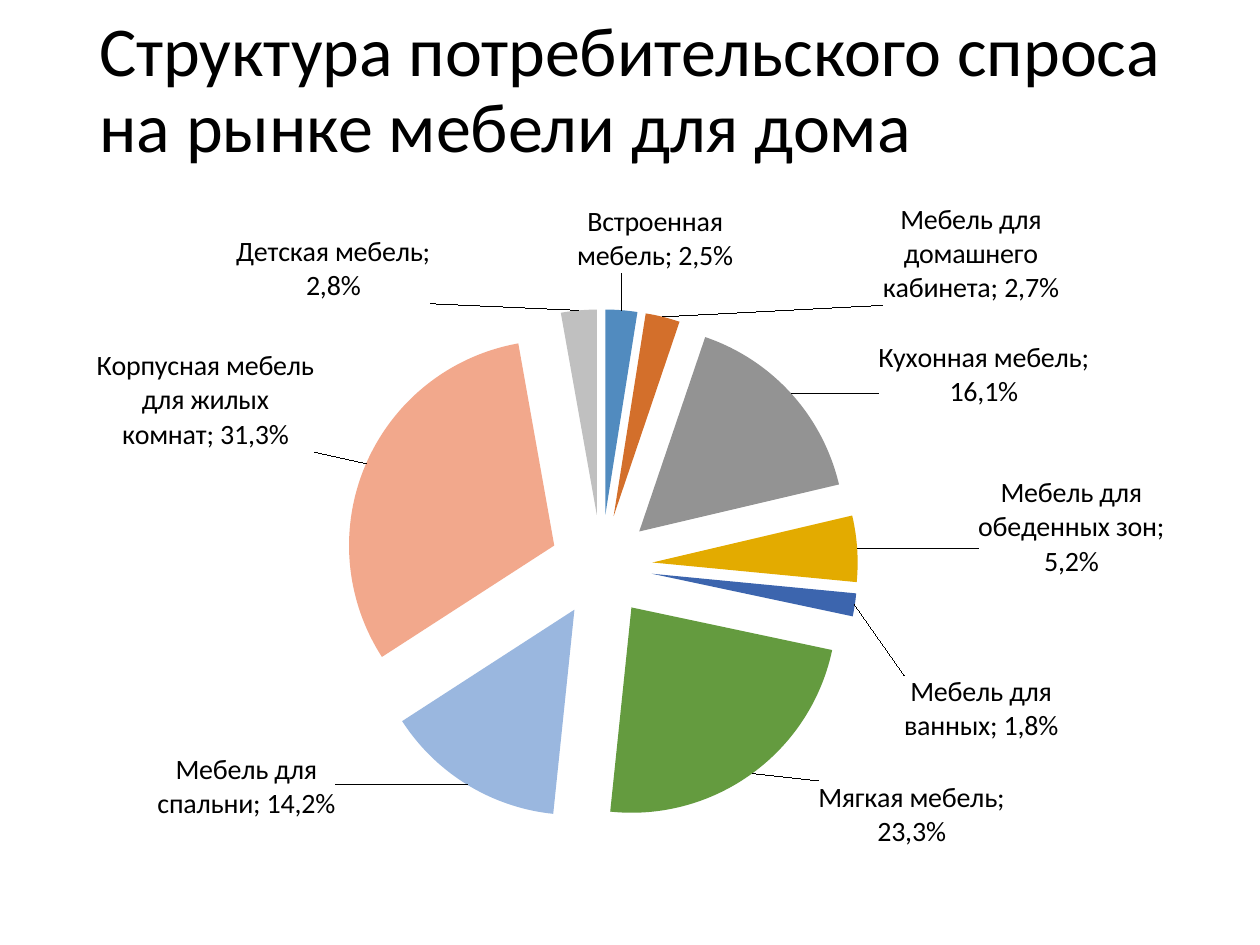
"""Build a slide with an exploded pie chart of furniture demand."""
from math import cos, pi, sin

from lxml import etree
from pptx import Presentation
from pptx.chart import data as chart_data
from pptx.dml.color import RGBColor
from pptx.enum import chart as charts, text
from pptx.oxml import ns
from pptx.util import Inches, Pt

TITLE = "Структура потребительского спроса на рынке мебели для дома"
FONT = "Calibri"
BLACK = RGBColor(0x00, 0x00, 0x00)

# name, share, colour, label centre, label width, label lines
SLICES = [
    ("Встроенная мебель", 0.025, RGBColor(0x51, 0x8B, 0xBF), (5.2, 1.9), 1.23, 2),
    ("Мебель для домашнего кабинета", 0.027, RGBColor(0xD3, 0x6F, 0x2B), (7.71, 2.02), 1.4, 3),
    ("Кухонная мебель", 0.161, RGBColor(0x93, 0x93, 0x93), (7.81, 2.98), 1.67, 2),
    ("Мебель для обеденных зон", 0.052, RGBColor(0xE3, 0xAB, 0x00), (8.5, 4.19), 1.47, 3),
    ("Мебель для ванных", 0.018, RGBColor(0x3C, 0x65, 0xAE), (7.79, 5.63), 1.22, 2),
    ("Мягкая мебель", 0.233, RGBColor(0x64, 0x9B, 0x3F), (7.23, 6.47), 1.47, 2),
    ("Мебель для спальни", 0.142, RGBColor(0x9A, 0xB7, 0xDF), (1.96, 6.25), 1.41, 2),
    ("Корпусная мебель для жилых комнат", 0.313, RGBColor(0xF2, 0xA8, 0x8C), (1.63, 3.18), 1.72, 3),
    ("Детская мебель", 0.028, RGBColor(0xC0, 0xC0, 0xC0), (2.65, 2.14), 1.53, 2),
]
LEFT, TOP, WIDTH, HEIGHT = 0.5, 1.55, 8.76, 5.77
PLOT = {"x": 0.23, "y": 0.157, "w": 0.516, "h": 0.706}
LINE_HEIGHT = 0.27
LABEL_GAP = 0.06


def write(para, content, *, size, color=BLACK, font=FONT):
    span = para.add_run()
    span.text = content
    span.font.size = Pt(size)
    span.font.name = font
    span.font.color.rgb = color


def make_layout(**values):
    layout = etree.Element(ns.qn("c:layout"))
    manual = etree.SubElement(layout, ns.qn("c:manualLayout"))
    for tag, value in values.items():
        etree.SubElement(manual, ns.qn(f"c:{tag}"), val=str(value))
    return layout


def side(component):
    return 0 if abs(component) < 0.087 else (1 if component > 0 else -1)


def label_shift(middle, centre, width, lines):
    radius = min(PLOT["w"] * WIDTH, PLOT["h"] * HEIGHT) / 2 + LABEL_GAP
    across, down = sin(2 * pi * middle), -cos(2 * pi * middle)
    usual_x = LEFT + (PLOT["x"] + PLOT["w"] / 2) * WIDTH + radius * across + side(across) * width / 2
    usual_y = TOP + (PLOT["y"] + PLOT["h"] / 2) * HEIGHT + radius * down + side(down) * lines * LINE_HEIGHT / 2
    return round((centre[0] - usual_x) / WIDTH, 3), round((centre[1] - usual_y) / HEIGHT, 3)


def add_title(page):
    box = page.shapes.add_textbox(Inches(0.69), Inches(0), Inches(8.62), Inches(1.46))
    box.text_frame.word_wrap = True
    box.text_frame.vertical_anchor = text.MSO_ANCHOR.MIDDLE
    para = box.text_frame.paragraphs[0]
    para.line_spacing = 0.9
    write(para, TITLE, size=40)


def add_pie(page):
    content = chart_data.CategoryChartData(number_format="0.0%")
    content.categories = [row[0] for row in SLICES]
    content.add_series("Series 1", [row[1] for row in SLICES])
    chart = page.shapes.add_chart(
        charts.XL_CHART_TYPE.PIE, Inches(LEFT), Inches(TOP), Inches(WIDTH), Inches(HEIGHT), content
    ).chart
    chart.has_legend = False
    chart.has_title = False
    chart.font.size, chart.font.name = Pt(18), FONT
    chart.font.color.rgb = BLACK
    pie = chart.plots[0]
    pie.vary_by_categories = True

    area = chart.element.find(".//" + ns.qn("c:plotArea"))
    for old in area.findall(ns.qn("c:layout")):
        area.remove(old)
    area.insert(0, make_layout(layoutTarget="inner", xMode="edge", yMode="edge", **PLOT))

    series = pie.series[0]
    explosion = etree.Element(ns.qn("c:explosion"), val="25")
    area.find(".//" + ns.qn("c:ser")).find(ns.qn("c:tx")).addnext(explosion)
    labels = series.data_labels
    labels.show_value = labels.show_category_name = True
    labels.position = charts.XL_LABEL_POSITION.OUTSIDE_END
    labels.font.size = Pt(16)

    total = sum(row[1] for row in SLICES)
    start = 0
    for index, (name, share, color, centre, width, lines) in enumerate(SLICES):
        point = series.points[index]
        point.format.fill.solid()
        point.format.fill.fore_color.rgb = color
        point.format.line.fill.background()
        percent = f"{share:.1%}".replace(".", ",")
        label = point.data_label
        write(label.text_frame.paragraphs[0], f"{name}; {percent}", size=16)
        label.position = charts.XL_LABEL_POSITION.OUTSIDE_END
        x, y = label_shift((start + share / 2) / total, centre, width, lines)
        holder = area.findall(".//" + ns.qn("c:dLbl"))[index]
        holder.find(ns.qn("c:idx")).addnext(make_layout(x=x, y=y))
        start += share


def main():
    deck = Presentation()
    deck.slide_width, deck.slide_height = Inches(10), Inches(7.5)
    page = deck.slides.add_slide(deck.slide_layouts[6])
    add_title(page)
    add_pie(page)
    deck.save("out.pptx")


if __name__ == "__main__":
    main()
